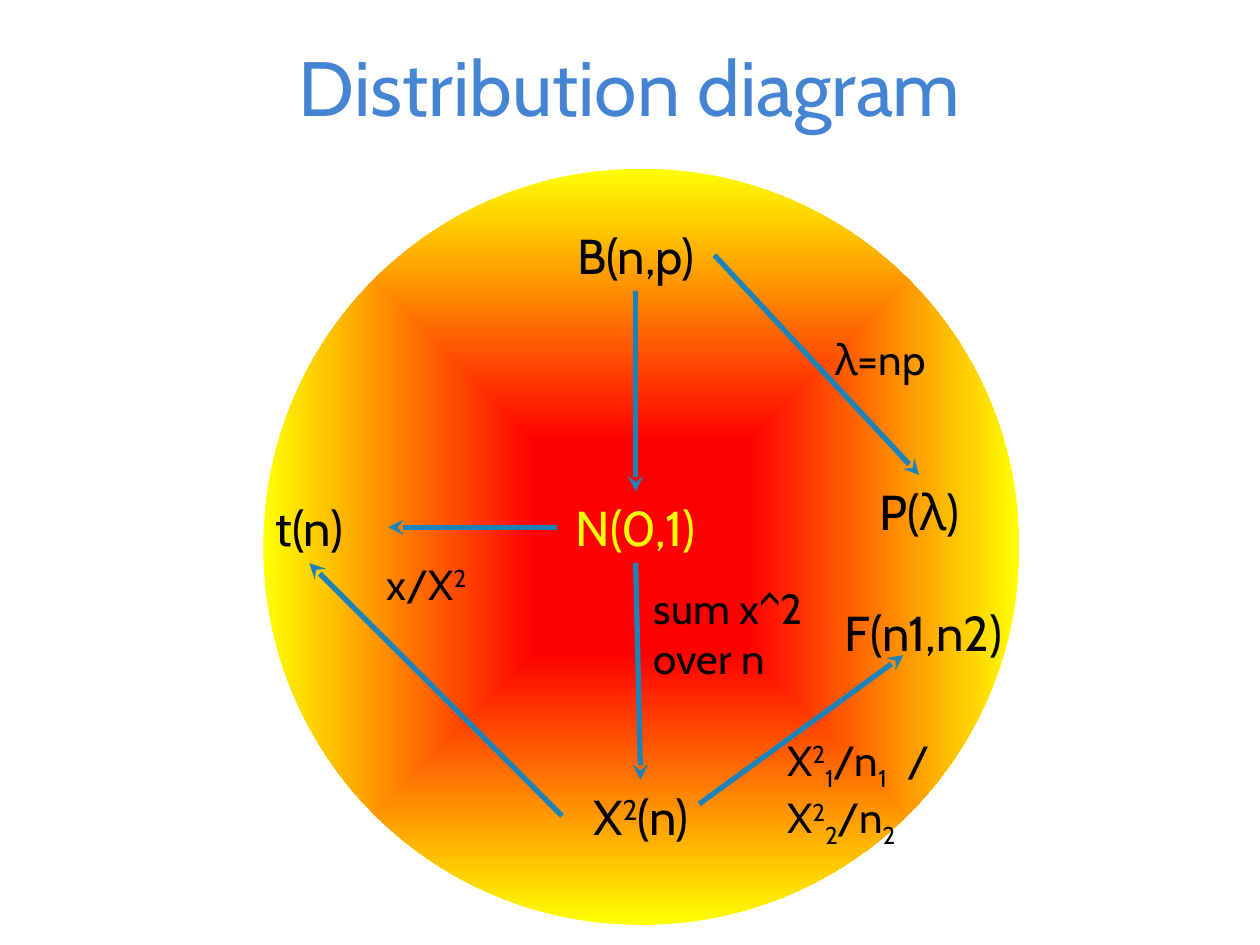
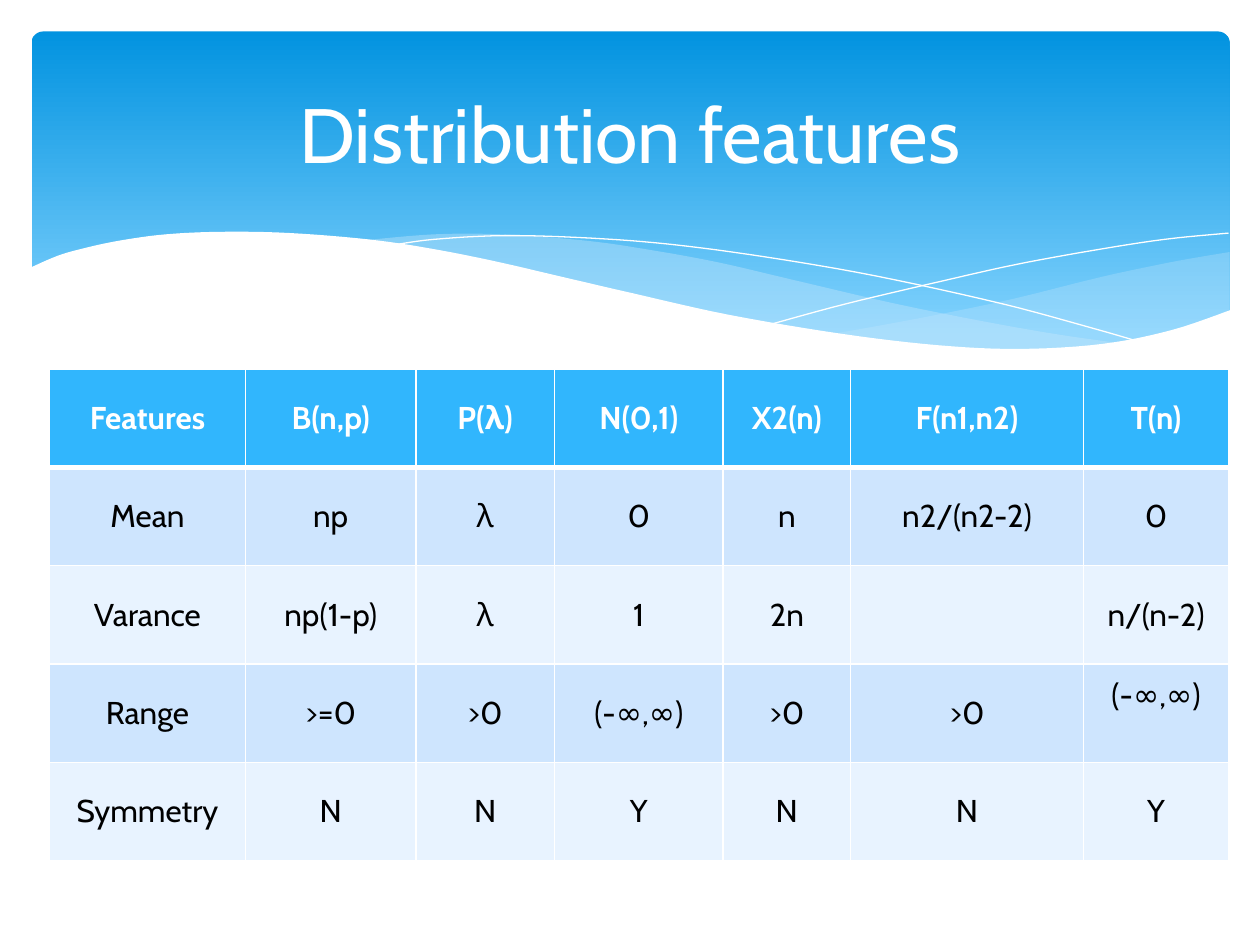
from lxml.etree import SubElement, fromstring
from pptx import Presentation
from pptx.dml.color import RGBColor
from pptx.enum.shapes import MSO_CONNECTOR as Connector, MSO_SHAPE as Shape
from pptx.enum.text import MSO_ANCHOR as Anchor, MSO_AUTO_SIZE as AutoSize, PP_ALIGN as Align
from pptx.oxml.ns import nsdecls, qn
from pptx.util import Emu, Pt

PX = 9144  # 100 px to the inch
FONT = "Cabin"
COLORS = {
    "white": "FFFFFF", "black": "000000", "yellow": "FFFF00", "red": "FF0000",
    "title": "4584D3", "arrow": "1C83B9", "band_top": "0293E0",
    "band_bottom": "83D3FE", "ribbon": "C6E7FC", "header": "31B6FD",
    "odd_row": "CEE5FE", "even_row": "E8F3FF",
}
TOP, LEFT, BOTTOM, RIGHT = range(4)
SUPER = {"baseline": "30000"}
SUB = {"baseline": "-25000"}
WIDE = {"spc": "600"}

RIGHT_RIBBON = (
    [(976, 200), (935, 207), (891, 216), (861, 223), (805, 237), (753, 248),
     (706, 257), (661, 265)],
    [(661, 265), (705, 271), (745, 275), (792, 277), (835, 277), (881, 273),
     (921, 265), (949, 257), (976, 247)],
)
MIDDLE_RIBBON = (
    [(893, 273), (837, 265), (775, 254), (706, 240), (629, 222), (569, 208),
     (514, 198), (465, 191), (399, 186), (344, 186), (286, 191)],
    [(286, 191), (342, 199), (404, 211), (449, 222), (530, 240), (601, 255),
     (665, 266), (722, 274), (785, 278), (838, 278), (893, 273)],
)
FALLING_LINE = [(309, 195), (344, 190), (401, 187), (469, 189), (533, 194),
                (608, 204), (695, 219), (795, 241), (869, 261), (907, 272)]
RISING_LINE = [(613, 257), (672, 241), (748, 223), (806, 210), (866, 199),
               (924, 190), (975, 185)]
WAVE = [(977, 246), (930, 262), (875, 273), (809, 277), (744, 274), (668, 265),
        (579, 250), (503, 233), (447, 220), (391, 207), (340, 197), (292, 190),
        (230, 185), (177, 184), (132, 186), (95, 191), (67, 197), (46, 203),
        (23, 213)]
WAVE_BASE = [(23, 329), (977, 329)]

FEATURES = [
    ["Features", "B(n,p)", "P(λ)", "N(0,1)", "X2(n)", "F(n1,n2)", "T(n)"],
    ["Mean", "np", "λ", "0", "n", "n2/(n2-2)", "0"],
    ["Varance", "np(1-p)", "λ", "1", "2n", "", "n/(n-2)"],
    ["Range", ">=0", ">0", "(-∞,∞)", ">0", ">0", "(-∞,∞)"],
    ["Symmetry", "N", "N", "Y", "N", "N", "Y"],
]
COLUMN_WIDTHS = [156, 135, 110, 134, 101, 185, 115]
ROW_HEIGHT = 78


def px(*lengths):
    return [Emu(round(length * PX)) for length in lengths]


def rgb(name):
    return RGBColor.from_string(COLORS[name])


def smooth_curve(points, steps=6):
    """Sample a Catmull-Rom spline that passes through all the points."""
    padded = [points[0], *points, points[-1]]
    curve = [points[0]]
    for a, b, c, d in zip(padded, padded[1:], padded[2:], padded[3:]):
        for step in range(1, steps + 1):
            t = step / steps
            curve.append(tuple(
                (2 * q + (r - p) * t + (2 * p - 5 * q + 4 * r - s) * t ** 2
                 + (3 * q - p - 3 * r + s) * t ** 3) / 2
                for p, q, r, s in zip(a, b, c, d)))
    return curve


def write_text(frame, paragraphs, size=24, color="black", align=Align.LEFT, bold=False):
    """Fill a frame; a paragraph is a string or a list of strings and (text, attributes)."""
    for index, content in enumerate(paragraphs):
        paragraph = frame.add_paragraph() if index else frame.paragraphs[0]
        paragraph.alignment = align
        for part in [content] if isinstance(content, str) else content:
            text, attributes = (part, {}) if isinstance(part, str) else part
            run = paragraph.add_run()
            run.text = text
            font = run.font
            font.name, font.size, font.bold = FONT, Pt(size), bold
            font.color.rgb = rgb(color)
            for name, value in attributes.items():
                run._r.get_or_add_rPr().set(name, value)


class SlideBuilder:
    def __init__(self, presentation):
        self.presentation = presentation
        self.slide = None

    def new_slide(self):
        self.slide = self.presentation.slides.add_slide(self.presentation.slide_layouts[5])

    def title(self, text, box, color):
        """Format the title and bring it in front of what is drawn so far."""
        title = self.slide.shapes.title
        title.left, title.top, title.width, title.height = px(*box)
        title.text_frame.vertical_anchor = Anchor.MIDDLE
        write_text(title.text_frame, [text], size=44, color=color, align=Align.CENTER)
        title.element.getparent().append(title.element)

    def gradient_shape(self, kind, box, stops, direction):
        shape = self.slide.shapes.add_shape(kind, *px(*box))
        shape.shadow.inherit = False
        shape.line.fill.background()
        shape.fill.background()
        stop_xml = "".join(
            f'<a:gs pos="{percent * 1000}"><a:srgbClr val="{COLORS[color]}"/></a:gs>'
            for percent, color in stops)
        properties = shape.element.spPr
        properties.replace(properties.find(qn("a:noFill")), fromstring(
            f'<a:gradFill {nsdecls("a")} rotWithShape="1">'
            f"<a:gsLst>{stop_xml}</a:gsLst>{direction}</a:gradFill>"))
        return shape

    def outline(self, points, fill=None, opacity=100, line=None):
        start, *others = [px(*point) for point in points]
        builder = self.slide.shapes.build_freeform(*start, scale=1.0)
        builder.add_line_segments(others, close=fill is not None)
        shape = builder.convert_to_shape()
        shape.shadow.inherit = False
        if fill:
            shape.fill.solid()
            shape.fill.fore_color.rgb = rgb(fill)
            color = shape.element.spPr.find(".//" + qn("a:srgbClr"))
            SubElement(color, qn("a:alpha"), val=str(opacity * 1000))
        else:
            shape.fill.background()
        if line:
            shape.line.color.rgb = rgb(line)
            shape.line.width = Pt(0)
        else:
            shape.line.fill.background()

    def text_box(self, paragraphs, box, **style):
        shape = self.slide.shapes.add_textbox(*px(*box))
        shape.text_frame.word_wrap = True
        shape.text_frame.auto_size = AutoSize.SHAPE_TO_FIT_TEXT
        write_text(shape.text_frame, paragraphs, **style)
        return shape

    def node(self, content, left, top, width=125, color="black"):
        return self.text_box([content], (left, top, width, 57), size=28,
                             color=color, align=Align.CENTER)

    def arrow(self, ends=(0, 0, 0, 0), begin=None, end=None):
        """Draw an arrow between two points or two (shape, side) pairs."""
        connector = self.slide.shapes.add_connector(Connector.STRAIGHT, *px(*ends))
        if begin:
            connector.begin_connect(*begin)
        if end:
            connector.end_connect(*end)
        connector.line.color.rgb = rgb("arrow")
        connector.line.width = Pt(3)
        SubElement(connector.line._get_or_add_ln(), qn("a:tailEnd"), type="stealth")
        SubElement(connector.element.spPr, qn("a:effectLst"))

    def cell_borders(self, cell, row):
        properties = cell._tc.get_or_add_tcPr()
        widths = {"lnL": 1, "lnR": 1, "lnT": 3 if row == 1 else 1, "lnB": 3 if row == 0 else 1}
        for side, width in widths.items():
            border = SubElement(properties, qn(f"a:{side}"), w=str(Pt(width)))
            fill = SubElement(border, qn("a:solidFill"))
            SubElement(fill, qn("a:srgbClr"), val=COLORS["white"])

    def table(self, rows, left, top):
        box = px(left, top, sum(COLUMN_WIDTHS), ROW_HEIGHT * len(rows))
        table = self.slide.shapes.add_table(len(rows), len(rows[0]), *box).table
        table.horz_banding = False
        for column, width in zip(table.columns, px(*COLUMN_WIDTHS)):
            column.width = width
        for row, texts in enumerate(rows):
            table.rows[row].height = px(ROW_HEIGHT)[0]
            header = row == 0
            fill = "header" if header else ("even_row", "odd_row")[row % 2]
            for column, text in enumerate(texts):
                cell = table.cell(row, column)
                self.cell_borders(cell, row)
                cell.fill.solid()
                cell.fill.fore_color.rgb = rgb(fill)
                cell.vertical_anchor = Anchor.MIDDLE
                if text:
                    write_text(cell.text_frame, [text], size=18, bold=header,
                               color="white" if header else "black", align=Align.CENTER)
        return table


def build_diagram(builder):
    builder.new_slide()
    builder.gradient_shape(
        Shape.OVAL, (209, 134, 600, 600), [(0, "red"), (28, "red"), (100, "yellow")],
        '<a:path path="shape"><a:fillToRect l="50000" t="50000" r="50000" b="50000"/></a:path>')
    builder.title("Distribution diagram", (50, 18, 900, 100), "title")

    normal = builder.node("N(0,1)", 442, 390, color="yellow")
    binomial = builder.node("B(n,p)", 442, 174)
    poisson = builder.node("P(λ)", 667, 377)
    student = builder.node("t(n)", 183, 390)
    chi_square = builder.node(["X", ("2", SUPER), "(n)"], 446, 619)
    builder.node("F(n1,n2)", 646, 473, width=174)

    for begin, end in [
        ((binomial, RIGHT), (poisson, TOP)),
        ((binomial, BOTTOM), (normal, TOP)),
        ((normal, BOTTOM), (chi_square, TOP)),
        ((chi_square, LEFT), (student, BOTTOM)),
        ((normal, LEFT), (student, RIGHT)),
    ]:
        builder.arrow(begin=begin, end=end)
    builder.arrow((555, 638, 717, 520))

    builder.text_box(["sum x^2", "over n"], (509, 457, 167, 91))
    ratio = [["X", ("2", SUPER), (n, SUB), "/n", (n, SUB)] for n in "12"]
    ratio[0] += [(" ", WIDE), "/"]
    builder.text_box(ratio, (615, 578, 264, 91))
    builder.text_box([["x/X", ("2", SUPER)]], (281, 438, 99, 50), align=Align.RIGHT)
    builder.text_box(["λ=np"], (653, 260, 167, 50))


def build_features(builder):
    builder.new_slide()
    band = builder.gradient_shape(
        Shape.ROUNDED_RECTANGLE, (25, 25, 951, 270), [(0, "band_top"), (90, "band_bottom")],
        '<a:lin ang="5400000" scaled="0"/>')
    band.adjustments[0] = 0.034
    for edges, opacity in [(RIGHT_RIBBON, 29), (MIDDLE_RIBBON, 40)]:
        points = [point for edge in edges for point in smooth_curve(edge)]
        builder.outline(points, fill="ribbon", opacity=opacity)
    for line in (FALLING_LINE, RISING_LINE):
        builder.outline(smooth_curve(line), line="white")
    builder.outline(smooth_curve(WAVE) + WAVE_BASE, fill="white")

    table = builder.table(FEATURES, 39, 293)
    table.cell(3, 6).margin_bottom = px(34)[0]  # this range sits above the middle
    builder.title("Distribution features", (50, 37, 900, 137), "white")


def main():
    presentation = Presentation()
    presentation.slide_width, presentation.slide_height = px(1000, 750)
    builder = SlideBuilder(presentation)
    build_diagram(builder)
    build_features(builder)
    presentation.save("out.pptx")


if __name__ == "__main__":
    main()
